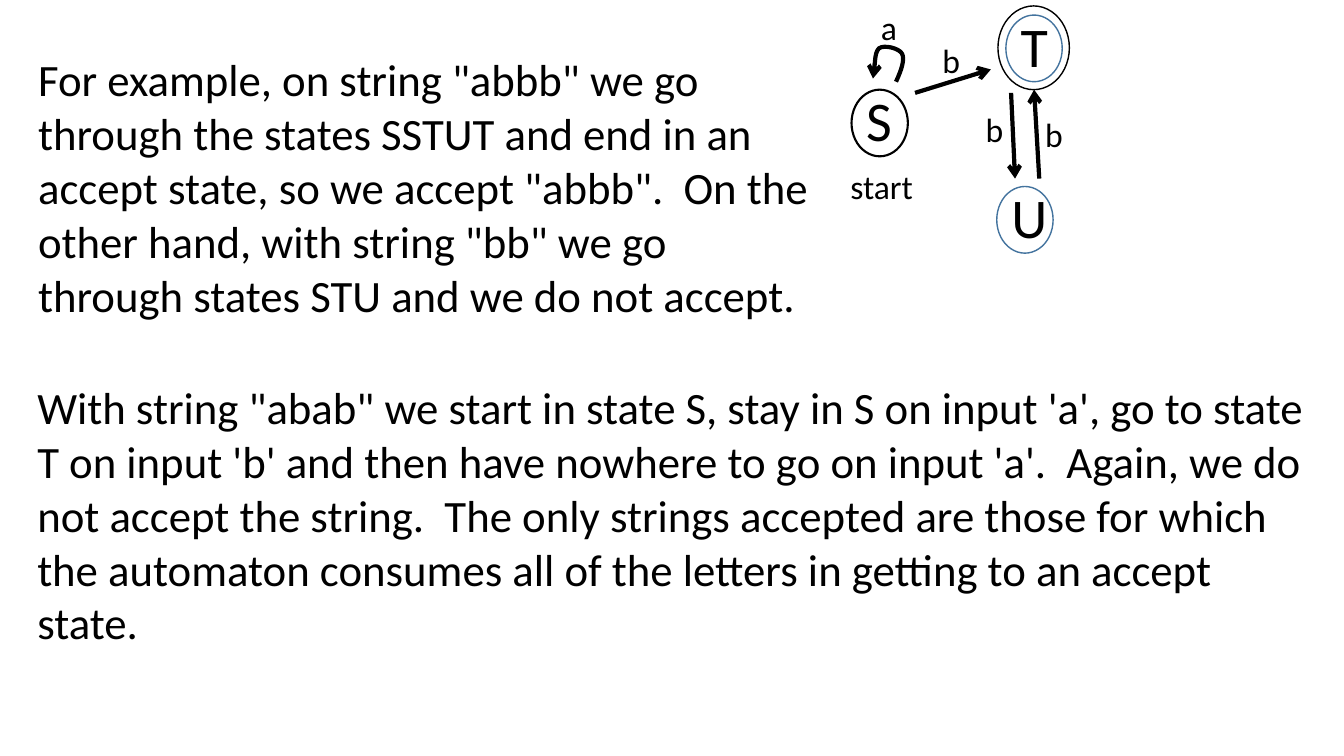
from dataclasses import dataclass

from lxml.etree import SubElement
from pptx import Presentation
from pptx.dml.color import RGBColor
from pptx.enum.shapes import MSO_CONNECTOR, MSO_SHAPE
from pptx.oxml.ns import qn
from pptx.util import Cm, Pt


@dataclass(frozen=True)
class Theme:
    font: str = "Calibri"
    ink: RGBColor = RGBColor(0x00, 0x00, 0x00)
    ring: RGBColor = RGBColor(0x43, 0x73, 0x9E)
    body: int = 32
    state: int = 40
    label: int = 24
    arrow: float = 3


THEME = Theme()
STATE_W, STATE_H = 1.42, 1.68


def add_text(s, text, size, x, y, w, h):
    tf = s.shapes.add_textbox(Cm(x), Cm(y), Cm(w), Cm(h)).text_frame
    tf.word_wrap = True
    r = tf.paragraphs[0].add_run()
    r.text = text
    r.font.name = THEME.font
    r.font.size = Pt(size)
    r.font.color.rgb = THEME.ink


def add_ring(s, x, y, w, h, color, width=1):
    sp = s.shapes.add_shape(MSO_SHAPE.OVAL, Cm(x), Cm(y), Cm(w), Cm(h))
    sp.shadow.inherit = False
    sp.fill.background()
    sp.line.color.rgb = color
    sp.line.width = Pt(width)


def add_state(s, name, x, y, color, width=1):
    add_ring(s, x, y, STATE_W, STATE_H, color, width)
    add_text(s, name, THEME.state, x + 0.12, y - 0.22, 0.71, 1.96)


def style_arrow(sp):
    sp.line.color.rgb = THEME.ink
    sp.line.width = Pt(THEME.arrow)
    ln = sp._element.spPr.find(qn("a:ln"))
    SubElement(ln, qn("a:tailEnd"), type="arrow")


def add_arrow(s, x1, y1, x2, y2):
    cxn = s.shapes.add_connector(
        MSO_CONNECTOR.STRAIGHT, Cm(x1), Cm(y1), Cm(x2), Cm(y2))
    style_arrow(cxn)
    SubElement(cxn._element.spPr, qn("a:effectLst"))


def bezier(points, steps=8):
    """Points along a cubic curve, without its start."""
    for i in range(1, steps + 1):
        t = i / steps
        weights = ((1 - t) ** 3, 3 * t * (1 - t) ** 2, 3 * t * t * (1 - t), t ** 3)
        yield tuple(round(sum(k * p[axis] for k, p in zip(weights, points)))
                    for axis in (0, 1))


def add_loop(s, x, y, points):
    pts = [(Cm(x + px), Cm(y + py)) for px, py in points]
    # Each cubic starts where the one before it ends
    curve = [p for i in range(0, len(pts) - 1, 3) for p in bezier(pts[i:i + 4])]
    builder = s.shapes.build_freeform(*pts[0])
    builder.add_line_segments(curve, close=False)
    sp = builder.convert_to_shape()
    sp.shadow.inherit = False
    sp.fill.background()
    style_arrow(sp)


def add_automaton(s, x, y):
    # States; T is accepting and has a second ring
    add_state(s, "S", x + 0.46, y + 2.26, THEME.ink, 1.5)
    add_state(s, "U", x + 4.12, y + 4.7, THEME.ring)
    add_state(s, "T", x + 4.35, y + 0.38, THEME.ring)
    add_ring(s, x + 4.15, y + 0.15, 1.8, 2.11, THEME.ink)

    # Transitions S to T, T to U, U to T, and S to itself
    for x1, y1, x2, y2 in ((2.06, 2.34, 3.97, 1.75),
                           (4.48, 2.34, 4.58, 4.5),
                           (5.19, 4.5, 5.06, 2.26)):
        add_arrow(s, x + x1, y + y1, x + x2, y + y2)
    add_loop(s, x, y, ((1.58, 2.06), (1.71, 1.78), (1.81, 1.5), (1.73, 1.35),
                       (1.66, 1.22), (1.28, 1.12), (1.15, 1.22),
                       (1.02, 1.35), (1.07, 1.65), (1, 1.98)))

    # Labels
    for text, dx, dy, w in (("start", 0.18, 4.06, 2.69),
                            ("a", 0.95, 0.05, 0.94),
                            ("b", 2.5, 0.89, 0.94),
                            ("b", 3.59, 2.62, 0.94),
                            ("b", 5.09, 2.74, 0.94)):
        add_text(s, text, THEME.label, x + dx, y + dy, w, 1.28)


def add_explanation(s, x, y):
    add_text(s, 'For example, on string "abbb" we go through the states SSTUT '
                'and end in an accept state, so we accept "abbb".  On the other '
                'hand, with string "bb" we go through states STU and we do not '
                'accept.', THEME.body, x, y, 20.02, 7.09)
    add_text(s, "With string \"abab\" we start in state S, stay in S on input 'a', "
                "go to state T on input 'b' and then have nowhere to go on input "
                "'a'.  Again, we do not accept the string.  The only strings "
                "accepted are those for which the automaton consumes all of the "
                "letters in getting to an accept state.",
             THEME.body, x - 0.02, y + 8.26, 32.79, 7.09)


def main():
    prs = Presentation()
    prs.slide_width, prs.slide_height = Cm(33.87), Cm(19.05)
    s = prs.slides.add_slide(prs.slide_layouts[6])
    add_automaton(s, 21, 0)
    add_explanation(s, 0.71, 1.19)
    prs.save("out.pptx")


if __name__ == "__main__":
    main()
